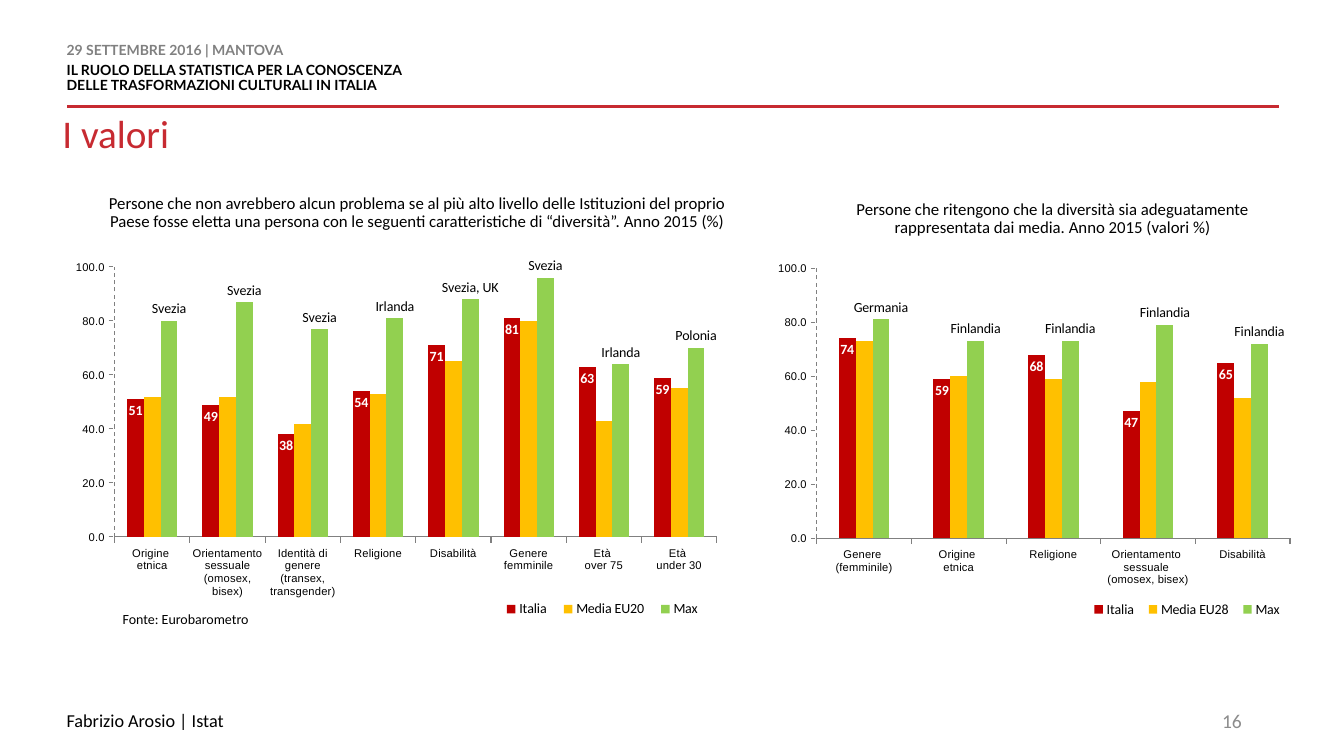
from lxml import etree
from pptx import Presentation
from pptx import util as u
from pptx.chart.data import CategoryChartData
from pptx.dml.color import RGBColor
from pptx.enum import chart as charts, dml, shapes, text
from pptx.oxml import parse_xml
from pptx.oxml.ns import nsdecls, qn

RED, BLACK, GREY = "C72A31", "000000", "808080"
SERIES_COLOURS = ("C00000", "FFC000", "92D050")


def rgb(value):
    return RGBColor.from_string(value)


def box_of(values):
    return [u.Cm(v) for v in values]


def set_font(font, size, colour=BLACK, name="Calibri", bold=False):
    font.size, font.name, font.bold = u.Pt(size), name, bold
    font.color.rgb = rgb(colour)


def prepare_frame(frame, anchor, inset):
    frame.word_wrap = True
    frame.auto_size = text.MSO_AUTO_SIZE.NONE
    frame.vertical_anchor = anchor
    if not inset:
        frame.margin_left = frame.margin_right = 0
        frame.margin_top = frame.margin_bottom = 0


def add_text(slide, place, words, size, colour=BLACK, align=text.PP_ALIGN.LEFT,
             anchor=text.MSO_ANCHOR.MIDDLE, inset=True, spacing=None):
    frame = slide.shapes.add_textbox(*box_of(place)).text_frame
    prepare_frame(frame, anchor, inset)
    paragraph = frame.paragraphs[0]
    paragraph.text = words
    paragraph.alignment, paragraph.line_spacing = align, spacing
    set_font(paragraph.font, size, colour)


def add_header(slide):
    frame = slide.shapes.add_textbox(*box_of((1.68, 1.09, 17.65, 1.68))).text_frame
    prepare_frame(frame, text.MSO_ANCHOR.TOP, False)
    lines = (("29 SETTEMBRE 2016 | MANTOVA", GREY, 3),
             ("IL RUOLO DELLA STATISTICA PER LA CONOSCENZA", BLACK, 0),
             ("DELLE TRASFORMAZIONI CULTURALI IN ITALIA", BLACK, 0))
    for i, (words, colour, after) in enumerate(lines):
        paragraph = frame.add_paragraph() if i else frame.paragraphs[0]
        paragraph.text = words
        paragraph.line_spacing, paragraph.space_after = u.Pt(11), u.Pt(after)
        set_font(paragraph.font, 10, colour, "Lato", True)

    rule = slide.shapes.add_connector(
        shapes.MSO_CONNECTOR.STRAIGHT, *box_of((32.23, 2.69, 1.68, 2.69)))
    rule.line.color.rgb, rule.line.width = rgb(RED), u.Pt(2)
    etree.SubElement(rule._element.spPr, qn("a:effectLst"))


def add_title(slide, words):
    title = slide.shapes.title
    title.left, title.top, title.width, title.height = box_of((1.57, 2.9, 6.53, 1.37))
    prepare_frame(title.text_frame, text.MSO_ANCHOR.TOP, False)
    paragraph = title.text_frame.paragraphs[0]
    paragraph.text = words
    paragraph.alignment, paragraph.line_spacing = text.PP_ALIGN.LEFT, 0.9
    set_font(paragraph.font, 28, RED)


def place_part(part, index, place, inner=False):
    """Fix a chart part at fractions (x, y, w, h) of the chart."""
    for old in part.findall(qn("c:layout")):
        part.remove(old)
    target = '<c:layoutTarget val="inner"/>' if inner else ""
    modes = '<c:xMode val="edge"/><c:yMode val="edge"/>'
    sizes = "".join(f'<c:{k} val="{v}"/>' for k, v in zip("xywh", place))
    part.insert(index, parse_xml(
        f'<c:layout {nsdecls("c")}><c:manualLayout>{target}{modes}{sizes}'
        "</c:manualLayout></c:layout>"))


def format_axes(chart):
    for axis in (chart.category_axis, chart.value_axis):
        axis.has_major_gridlines = False
        axis.major_tick_mark = charts.XL_TICK_MARK.OUTSIDE
        axis.format.line.color.rgb = rgb(GREY)
        axis.format.line.width = u.Pt(0.75)
        set_font(axis.tick_labels.font, 8, name="Arial")
    scale = chart.value_axis
    scale.minimum_scale, scale.maximum_scale, scale.major_unit = 0, 100, 20
    scale.tick_labels.number_format = "#,##0.0"
    scale.tick_labels.number_format_is_linked = False
    scale.format.line.dash_style = dml.MSO_LINE.DASH


def label_series(italy, best, countries):
    values = italy.data_labels
    values.show_value = True
    values.position = charts.XL_LABEL_POSITION.INSIDE_END
    set_font(values.font, 10, "FFFFFF", bold=True)
    for i, country in enumerate(countries):
        label = best.points[i].data_label
        run = label.text_frame.paragraphs[0].add_run()
        run.text = country
        set_font(run.font, 10)
        label.position = charts.XL_LABEL_POSITION.OUTSIDE_END


def add_column_chart(slide, place, categories, series, countries, gap, plot_at, legend_at):
    data = CategoryChartData(number_format="0")
    data.categories = categories
    for name, values in series:
        data.add_series(name, values)
    chart = slide.shapes.add_chart(
        charts.XL_CHART_TYPE.COLUMN_CLUSTERED, *box_of(place), data).chart
    chart.has_title = False
    set_font(chart.font, 10)
    plot = chart.plots[0]
    plot.gap_width, plot.overlap, plot.vary_by_categories = gap, 0, False
    for bars, colour in zip(plot.series, SERIES_COLOURS):
        bars.format.fill.solid()
        bars.format.fill.fore_color.rgb = rgb(colour)
    format_axes(chart)
    label_series(plot.series[0], plot.series[2], countries)

    chart.has_legend = True
    chart.legend.position = charts.XL_LEGEND_POSITION.BOTTOM
    chart.legend.include_in_layout = False
    set_font(chart.legend.font, 10)
    place_part(chart._chartSpace.chart.plotArea, 0, plot_at, inner=True)
    place_part(chart.legend._element, 1, legend_at)


def main():
    prs = Presentation()
    prs.slide_width, prs.slide_height = box_of((33.87, 19.05))
    slide = prs.slides.add_slide(prs.slide_layouts[5])

    # Heading
    add_header(slide)
    add_title(slide, "I valori")

    # Chart captions
    captions = (
        ((2.34, 4.78, 16.36, 1.07),
         "Persone che non avrebbero alcun problema se al più alto livello delle "
         "Istituzioni del proprio Paese fosse eletta una persona con le seguenti "
         "caratteristiche di “diversità”. Anno 2015 (%)"),
        ((20.42, 4.93, 12.22, 1.07),
         "Persone che ritengono che la diversità sia adeguatamente rappresentata "
         "dai media. Anno 2015 (valori %)"))
    for place, words in captions:
        add_text(slide, place, words, 12, align=text.PP_ALIGN.CENTER,
                 anchor=text.MSO_ANCHOR.TOP, spacing=0.9)

    # Attitudes to elected leaders
    add_column_chart(
        slide, (1.57, 6.25, 16.51, 9.58),
        ["Origine \netnica", "Orientamento \nsessuale (omosex, bisex)",
         "Identità di genere (transex, transgender)", "Religione", "Disabilità",
         "Genere femminile", "Età \nover 75", "Età \nunder 30"],
        [("Italia", (51, 49, 38, 54, 71, 81, 63, 59)),
         ("Media EU20", (52, 52, 42, 53, 65, 80, 43, 55)),
         ("Max", (80, 87, 77, 81, 88, 96, 64, 70))],
        ["Svezia", "Svezia", "Svezia", "Irlanda", "Svezia, UK", "Svezia",
         "Irlanda", "Polonia"],
        150, (0.08, 0.05, 0.92, 0.71), (0.66, 0.92, 0.33, 0.06))

    # Diversity in the media
    add_column_chart(
        slide, (19.61, 6.38, 13.03, 9.45),
        ["Genere \n(femminile)", "Origine \netnica", "Religione",
         "Orientamento \nsessuale \n(omosex, bisex)", "Disabilità"],
        [("Italia", (74, 59, 68, 47, 65)),
         ("Media EU28", (73, 60, 59, 58, 52)),
         ("Max", (81, 73, 73, 79, 72))],
        ["Germania"] + ["Finlandia"] * 4,
        262, (0.07, 0.04, 0.92, 0.72), (0.59, 0.92, 0.4, 0.06))

    # Source, footer and page number
    add_text(slide, (2.84, 15.37, 5.84, 0.46), "Fonte: Eurobarometro", 10)
    add_text(slide, (1.68, 17.65, 25.35, 1.02), "Fabrizio Arosio | Istat", 13, inset=False)
    add_text(slide, (23.93, 17.65, 7.62, 1.02), "16", 14, "8C8C8C", text.PP_ALIGN.RIGHT)

    prs.save("out.pptx")


if __name__ == "__main__":
    main()
